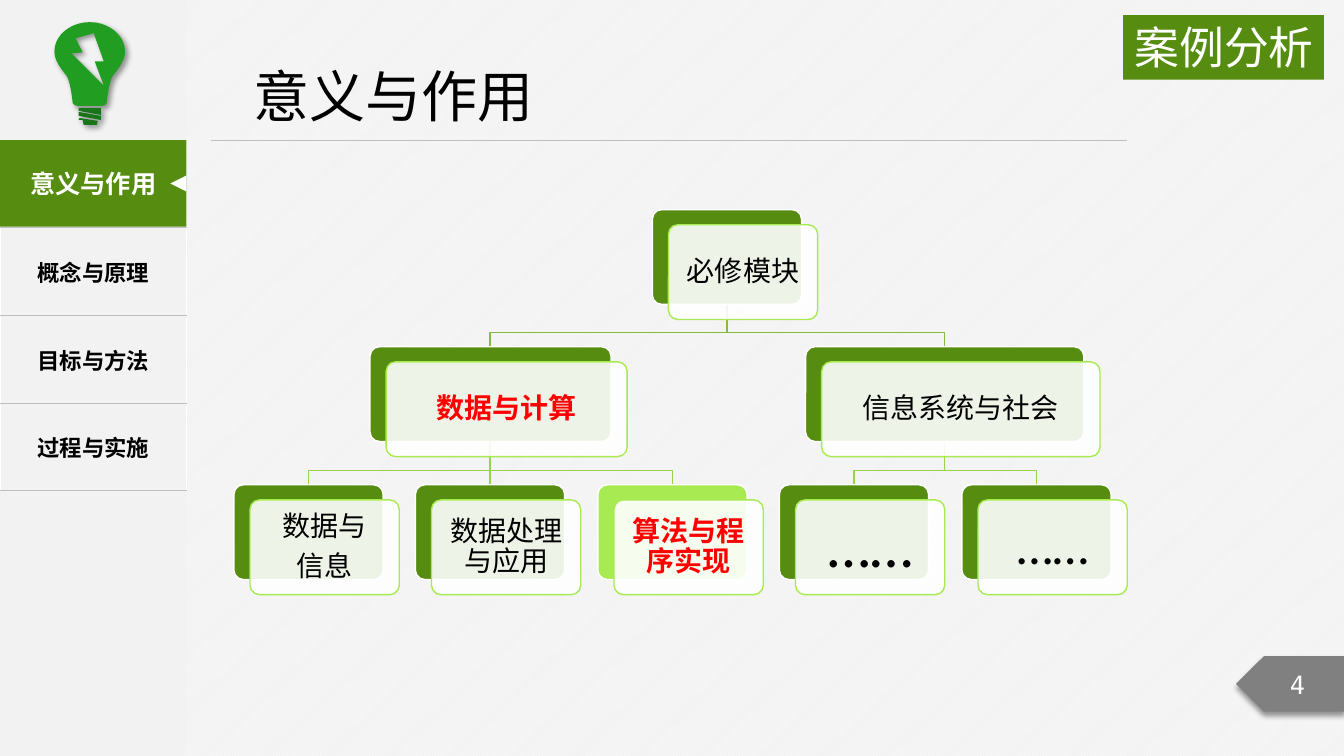
from lxml import etree
from pptx import Presentation
from pptx.dml.color import RGBColor
from pptx.enum.dml import MSO_PATTERN
from pptx.enum.shapes import MSO_CONNECTOR, MSO_SHAPE
from pptx.enum.text import MSO_ANCHOR, PP_ALIGN
from pptx.oxml.ns import qn
from pptx.util import Emu, Pt

PX = 9144  # 100 px to the inch
RECT, ROUND = MSO_SHAPE.RECTANGLE, MSO_SHAPE.ROUNDED_RECTANGLE
ARROW, PLATE = MSO_SHAPE.ISOSCELES_TRIANGLE, MSO_SHAPE.PENTAGON
LEFT, MID, RIGHT = PP_ALIGN.LEFT, PP_ALIGN.CENTER, PP_ALIGN.RIGHT
TOP, CENTER = MSO_ANCHOR.TOP, MSO_ANCHOR.MIDDLE
STRAIGHT = MSO_CONNECTOR.STRAIGHT
UPWARD = MSO_PATTERN.LIGHT_UPWARD_DIAGONAL
SANS, MONO, BODY = "Noto Sans CJK SC", "DejaVu Sans Mono", "Calibri"
GREEN, LIME, GRAY = "568D11", "A7EA52", "BFBFBF"
WHITE, BLACK, RED, PALE = "FFFFFF", "000000", "FF0000", "F2F2F2"


def rgb(code):
    return RGBColor.from_string(code)


def sub(parent, tag, **attrs):
    node = etree.SubElement(parent, qn(tag))
    for key, val in attrs.items():
        node.set(key, str(val))
    return node


def curve(start, *parts, steps=10):
    """Points along joined cubic curves; each part is two handles and an end."""
    points = [start]
    for a, b, end in parts:
        first = points[-1]
        for i in range(1, steps + 1):
            t = i / steps
            u = 1 - t
            points.append(tuple(
                u**3 * p + 3 * u * u * t * q + 3 * u * t * t * r + t**3 * s
                for p, q, r, s in zip(first, a, b, end)))
    return points


class Deck:
    def __init__(self, wide, high):
        self.show = Presentation()
        self.show.slide_width, self.show.slide_height = Emu(wide * PX), Emu(high * PX)
        self.slide = self.show.slides.add_slide(self.show.slide_layouts[6])
        self.shapes = self.slide.shapes

    def back(self, front, behind):
        fill = self.slide.background.fill
        fill.patterned()
        fill.pattern = UPWARD
        fill.fore_color.rgb, fill.back_color.rgb = rgb(front), rgb(behind)

    def paint(self, shape, fill, line=None, width=1):
        shape.shadow.inherit = False
        if fill:
            shape.fill.solid()
            shape.fill.fore_color.rgb = rgb(fill)
        else:
            shape.fill.background()
        if line:
            shape.line.color.rgb, shape.line.width = rgb(line), Pt(width)
        else:
            shape.line.fill.background()
        return shape

    def shade(self, shape, angle):
        effect = shape._element.spPr.find(qn("a:effectLst"))
        cast = sub(effect, "a:outerShdw", blurRad=Pt(4), dist=Pt(3),
                   dir=angle * 60000, algn="ctr", rotWithShape=0)
        sub(sub(cast, "a:srgbClr", val=BLACK), "a:alpha", val=40000)

    def box(self, kind, x, y, w, h, fill, line=None):
        shape = self.shapes.add_shape(kind, *(Emu(n * PX) for n in (x, y, w, h)))
        return self.paint(shape, fill, line)

    def words(self, frame, text, size, color, font=SANS, bold=False, align=MID):
        frame.text = text
        for para in frame.paragraphs:
            para.alignment = align
            for run in para.runs:
                run.font.size, run.font.name, run.font.bold = Pt(size), font, bold
                run.font.color.rgb = rgb(color)

    def label(self, shape, text, size, color, anchor=CENTER, wrap=True, **style):
        frame = shape.text_frame
        frame.word_wrap, frame.vertical_anchor = wrap, anchor
        self.words(frame, text, size, color, **style)

    def text(self, x, y, w, h, text, size, color, **style):
        shape = self.shapes.add_textbox(*(Emu(n * PX) for n in (x, y, w, h)))
        self.label(shape, text, size, color, TOP, False, **style)

    def rule(self, x1, y1, x2, y2, color, width):
        line = self.shapes.add_connector(STRAIGHT, *(Emu(n * PX) for n in (x1, y1, x2, y2)))
        line.line.color.rgb, line.line.width = rgb(color), Pt(width)
        sub(line._element.spPr, "a:effectLst")

    def free(self, *outlines, fill=None, line=None):
        pen = None
        for outline in outlines:
            first, *rest = [(x * PX, y * PX) for x, y in outline]
            if pen:
                pen.move_to(*first)
            else:
                pen = self.shapes.build_freeform(*first, scale=1.0)
            pen.add_line_segments(rest, close=bool(fill))
        return self.paint(pen.convert_to_shape(), fill, line)

    def menu(self, x, y, w, row, names):
        frame = self.shapes.add_table(len(names), 1, *(
            Emu(n * PX) for n in (x, y, w, row * len(names))))
        table = frame.table
        table.first_row = table.horz_banding = False
        for i, name in enumerate(names):
            cell = table.cell(i, 0)
            cell.vertical_anchor = CENTER
            if name:
                self.words(cell.text_frame, name, 16, BLACK, bold=True)
            props = cell._tc.get_or_add_tcPr()
            for side in ("a:lnT", "a:lnB"):
                edge = sub(props, side, w=Pt(1))
                sub(sub(edge, "a:solidFill"), "a:srgbClr", val=GRAY)
            cell.fill.background()

    def card(self, x, y, w, text, size=20, color=BLACK, fill=GREEN, inset=8):
        for paint, line, dx, dy in ((fill, WHITE, 0, 0), (WHITE, LIME, 16, 15)):
            shape = self.box(ROUND, x + dx, y + dy, w, 94, paint, line)
            shape.adjustments[0] = 0.1
        tint = shape._element.spPr.find(qn("a:solidFill"))
        sub(tint[0], "a:alpha", val=90000)
        frame = shape.text_frame
        frame.margin_left = frame.margin_right = Emu(inset * PX)
        frame.margin_top = frame.margin_bottom = Emu(inset * PX)
        self.label(shape, text, size, color, font=BODY, bold=color == RED)
        for para in frame.paragraphs:
            para.line_spacing, para.space_after = 0.9, Pt(size * 0.35)


def main():
    deck = Deck(1333, 750)
    deck.back(WHITE, PALE)

    # Side menu
    deck.box(RECT, 0, 0, 185, 750, PALE)
    deck.menu(0, 139, 185, 87, ["", "概念与原理", "目标与方法", "过程与实施"])
    active = deck.box(RECT, 0, 139, 185, 86, GREEN)
    deck.label(active, "意义与作用", 18, WHITE, bold=True)
    deck.box(ARROW, 169, 174, 16, 16, WHITE).rotation = 270

    # Title, page number and section tag
    deck.rule(209, 139, 1118, 139, GRAY, 0.5)
    deck.text(242, 56, 301, 77, "意义与作用", 40, BLACK, align=LEFT)
    page = deck.box(PLATE, 1226, 651, 108, 55, "808080")
    page._element.spPr.xfrm.set("flipH", "1")
    deck.shade(page, 90)
    deck.label(page, "4", 18, WHITE, font=MONO)
    tag = deck.box(RECT, 1114, 15, 199, 64, GREEN)
    deck.label(tag, "案例分析", 32, WHITE, TOP, align=RIGHT)

    # Light bulb: glass with a bolt cut out, then the screw base
    left = curve((89, 22), ((70, 22), (54, 35), (54, 51)),
                 ((54, 61), (62, 70), (66, 75)), ((70, 81), (72, 101), (72, 101)),
                 ((72, 103), (74, 105), (77, 105)))
    glass = left + [(178 - x, y) for x, y in reversed(left)]
    bolt = [(71, 53), (82, 52), (75, 38), (93, 33), (103, 61), (94, 61), (103, 85)]
    base = [
        [(78, 107), (100, 107), (100, 114), (78, 110)],
        [(100, 119), (100, 115), (78, 111), (78, 115)],
        [(79, 117), (97, 120), (96, 124), (83, 124), (82, 119), (78, 119)],
    ]
    deck.shade(deck.free(glass, bolt, fill="219E21"), 45)
    for part in base:
        deck.shade(deck.free(part, fill="197519"), 45)

    # Tree links: parent x, parent bottom, child centres, colour
    leaf = [232 + 361 * i // 2 for i in range(5)]
    mids = [x + 74 for x in leaf]
    links = [(937, 438, mids[3:], "98D44A"), (486, 438, mids[:3], "98D44A"),
             (721, 301, [486, 937], "86BB42")]
    for x, y, ends, color in links:
        for end in ends:
            bend = [(x, y + 29), (end, y + 29)] if end != x else []
            deck.free([(x, y), *bend, (end, y + 43)], line=color)

    # Tree cards
    deck.card(647, 208, 148, "必修模块")
    deck.card(367, 344, 239, "数据与计算", color=RED)
    deck.card(799, 344, 276, "信息系统与社会")
    leaves = [
        dict(text="数据与\n信息"),
        dict(text="数据处理与应用"),
        dict(text="算法与程序实现", color=RED, fill=LIME),
        dict(text="……", size=44, inset=18),
        dict(text="……", size=37, inset=15),
    ]
    for x, style in zip(leaf, leaves):
        deck.card(x, 481, 148, **style)

    deck.show.save("out.pptx")


if __name__ == "__main__":
    main()
